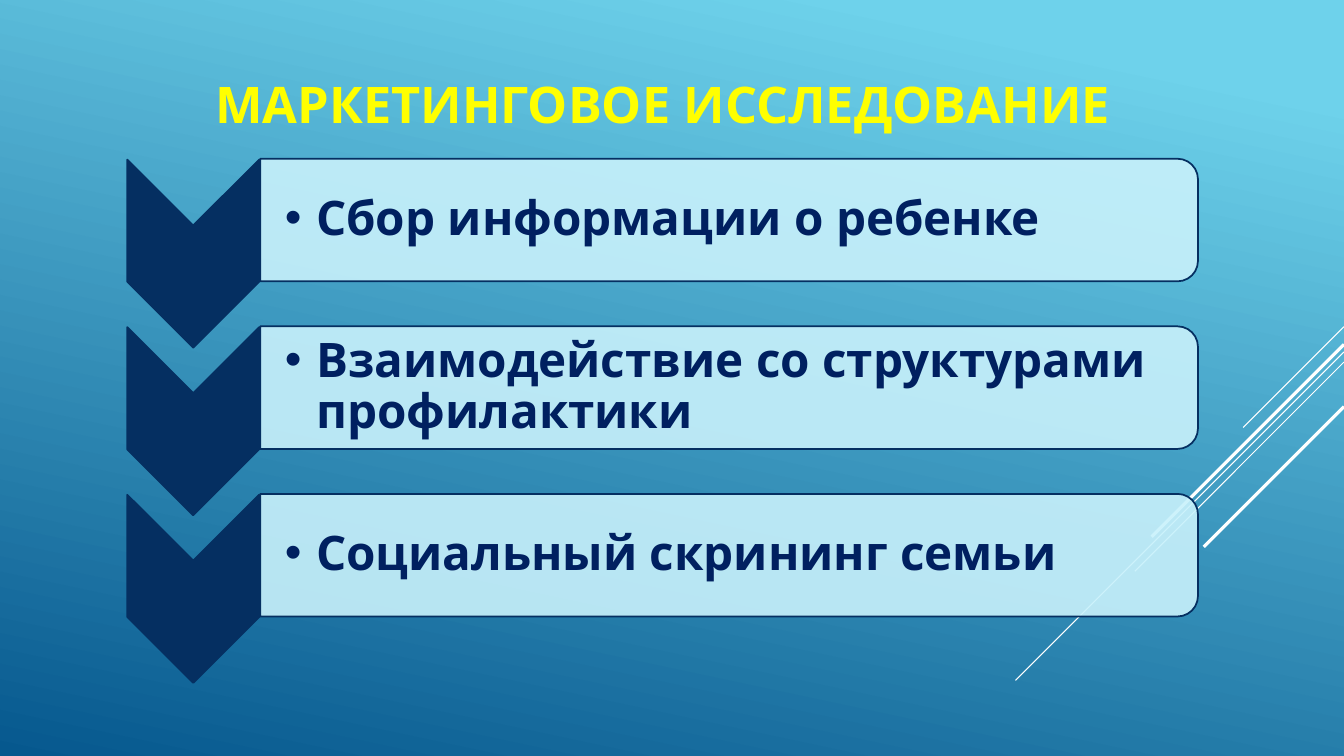
import pptx
import pptx.util
import pptx.dml.color
import pptx.enum.shapes
import pptx.enum.text
import pptx.oxml.ns
import lxml.etree

COLS, ROWS = 160, 90
SHAPE = pptx.enum.shapes.MSO_SHAPE
ALIGN = pptx.enum.text.PP_ALIGN
NAVY, PALE, WHITE = "052F61", "C8F1FB", "FFFFFF"
FONT = "League Spartan"


def color(code):
    return pptx.dml.color.RGBColor.from_string(code)


def adopt(node, tag, **attrs):
    return lxml.etree.SubElement(node, pptx.oxml.ns.qn(tag), attrs)


def apply(item, style):
    for key, value in style.items():
        setattr(item, key, value)


class Deck:
    def __init__(self):
        self.show = pptx.Presentation()
        self.show.slide_width = pptx.util.Inches(13.33)
        self.show.slide_height = pptx.util.Inches(7.5)
        self.slide = self.show.slides.add_slide(self.show.slide_layouts[6])
        self.shapes = self.slide.shapes

    def x(self, cols):
        return round(self.show.slide_width * cols / COLS)

    def y(self, rows):
        return round(self.show.slide_height * rows / ROWS)

    def box(self, left, top, width, height):
        return self.x(left), self.y(top), self.x(width), self.y(height)

    def back(self, stops, angle):
        fill = self.slide.background.fill
        fill.gradient()
        fill.gradient_angle = 360 - angle
        for stop, (place, code) in zip(fill.gradient_stops, stops):
            stop.position = place
            stop.color.rgb = color(code)

    def ray(self, row, run, width):
        """Draw a diagonal line down and left from the right edge."""
        line = self.shapes.add_connector(
            pptx.enum.shapes.MSO_CONNECTOR.STRAIGHT,
            self.x(COLS), self.y(row), self.x(COLS - run), self.y(row + run))
        line.line.color.rgb = color(WHITE)
        line.line.width = pptx.util.Pt(width)
        adopt(line._element.spPr, "a:effectLst")

    def turned(self, kind, midx, midy, width, height, code, alpha=None):
        """Place a shape by its centre, turned a quarter clockwise."""
        shape = self.shapes.add_shape(kind, *self.box(
            midx - width / 2, midy - height / 2, width, height))
        shape.rotation = 90
        shape.shadow.inherit = False
        shape.fill.solid()
        shape.fill.fore_color.rgb = color(code)
        shape.line.color.rgb = color(NAVY)
        shape.line.width = pptx.util.Pt(1.25)
        if alpha:
            tint = shape._element.spPr.find(".//" + pptx.oxml.ns.qn("a:srgbClr"))
            adopt(tint, "a:alpha", val=str(alpha * 1000))

    def text(self, words, area, size, code, frame=None, para=None, bullet=None):
        body = self.shapes.add_textbox(*self.box(*area)).text_frame
        middle = pptx.enum.text.MSO_ANCHOR.MIDDLE
        apply(body, {"word_wrap": True, "vertical_anchor": middle, **(frame or {})})
        line = body.paragraphs[0]
        apply(line, para or {})
        if bullet:
            props = line._p.get_or_add_pPr()
            indent = pptx.util.Inches(0.31)
            props.set("marL", str(indent))
            props.set("indent", str(-indent))
            adopt(props, "a:buFont", typeface="Arial")
            adopt(props, "a:buChar", char=bullet)
        run = line.add_run()
        run.text = words
        apply(run.font, {"name": FONT, "size": pptx.util.Pt(size), "bold": True})
        run.font.color.rgb = color(code)


def main():
    deck = Deck()

    # Background and diagonal rays
    deck.back([(0.1, "6ED2EB"), (1, "06588E")], 102)
    for ray in [(38.9, 12, 0.75), (41.9, 39.1, 0.75), (43.1, 24.9, 0.75),
                (41, 22.9, 2.25), (48.4, 16.7, 2.25)]:
        deck.ray(*ray)

    # Title
    deck.text("МАРКЕТИНГОВОЕ ИССЛЕДОВАНИЕ", (7.2, 2.4, 143.4, 19.8), 36,
              "FFFF00", para={"alignment": ALIGN.CENTER})

    # Steps: chevron, bar and bulleted text
    slim = pptx.util.Inches(0.02)
    frame = {"margin_left": pptx.util.Inches(0.26), "margin_top": slim,
             "margin_right": slim, "margin_bottom": slim}
    para = {"level": 1, "line_spacing": 0.9, "alignment": ALIGN.LEFT,
            "space_after": pptx.util.Pt(5)}
    steps = ["Сбор информации о ребенке",
             "Взаимодействие со структурами профилактики",
             "Социальный скрининг семьи"]
    for i, step in enumerate(steps):
        mid = 26.2 + 19.95 * i
        deck.turned(SHAPE.CHEVRON, 23, mid + 4, 22.4, 15.7, NAVY)
        deck.turned(SHAPE.ROUND_2_SAME_RECTANGLE, 86.8, mid, 14.6, 111.6, PALE, 90)
        deck.text(step, (30.8, mid - 6.6, 111, 13.2), 34, "002060",
                  frame, para, "•")

    deck.show.save("out.pptx")


if __name__ == "__main__":
    main()
